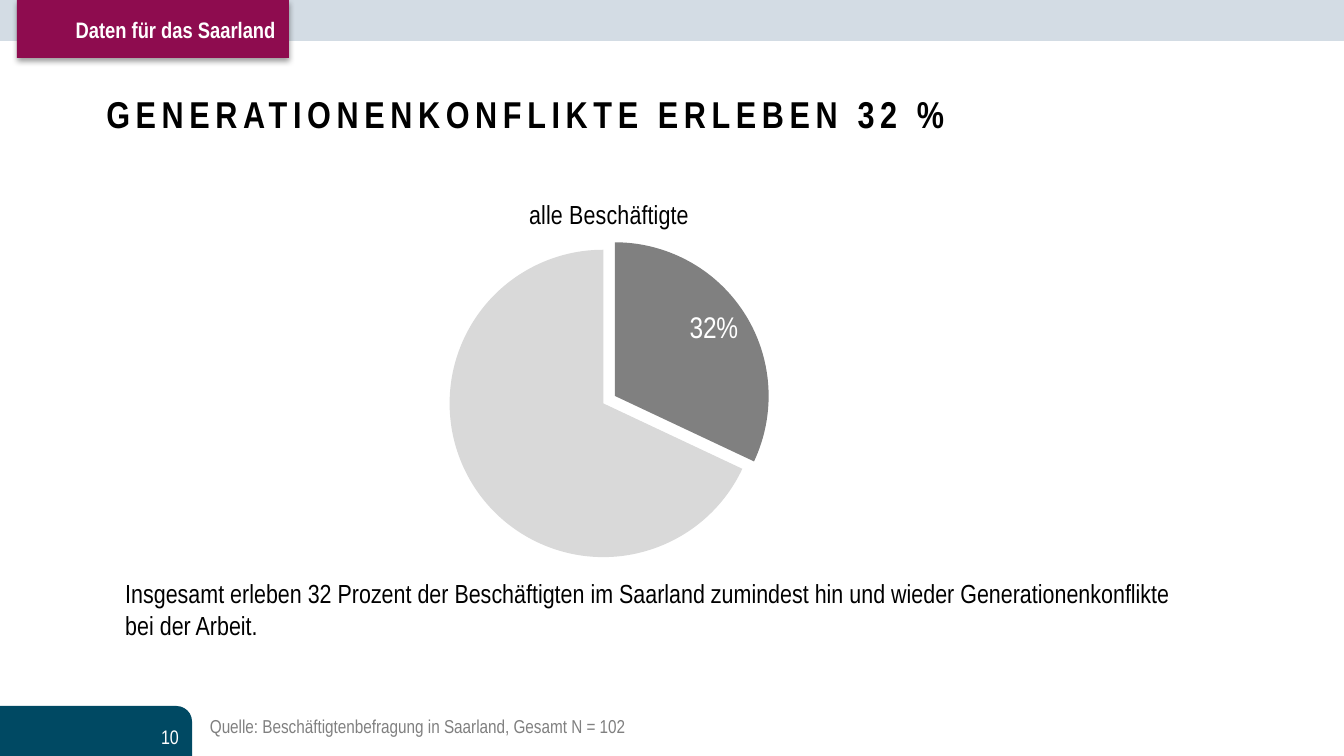
from lxml import etree
from pptx import Presentation
from pptx.chart.data import CategoryChartData
from pptx.dml.color import RGBColor
from pptx.enum.chart import XL_CHART_TYPE, XL_LABEL_POSITION
from pptx.enum.shapes import MSO_SHAPE
from pptx.enum.text import MSO_ANCHOR, PP_ALIGN
from pptx.oxml import parse_xml
from pptx.oxml.ns import nsdecls, qn
from pptx.util import Emu, Pt

RECTANGLE = MSO_SHAPE.RECTANGLE
ONE_ROUND_CORNER = MSO_SHAPE.ROUND_1_RECTANGLE
LEFT, RIGHT = PP_ALIGN.LEFT, PP_ALIGN.RIGHT
TOP, MIDDLE = MSO_ANCHOR.TOP, MSO_ANCHOR.MIDDLE
PIE = XL_CHART_TYPE.PIE
INSIDE_END = XL_LABEL_POSITION.INSIDE_END

WIDTH, HEIGHT = 1344, 756
EMU_PER_PX = 9144000 / WIDTH
FONT = "Arial Narrow"
BLACK, WHITE, GREY = "000000", "FFFFFF", "808080"
LIGHT_GREY, PALE_BLUE = "D9D9D9", "D3DCE4"
PETROL, BERRY = "004963", "8E0C4F"


def px(value):
    """Turn pixels into EMU."""
    return Emu(round(value * EMU_PER_PX))


def color(value):
    """Turn a hex string into a colour."""
    return RGBColor.from_string(value)


def style_font(font, size, fill, bold=False):
    """Set typeface, size, colour and weight."""
    font.name = FONT
    font.size = Pt(size)
    font.bold = bold
    font.color.rgb = color(fill)


def add_block(slide, box, fill, kind=RECTANGLE):
    """Add a filled shape without outline or shadow."""
    shape = slide.shapes.add_shape(kind, *map(px, box))
    shape.shadow.inherit = False
    shape.fill.solid()
    shape.fill.fore_color.rgb = color(fill)
    shape.line.fill.background()
    return shape


def add_drop_shadow(shape):
    """Give a shape a soft shadow straight below it."""
    effects = shape._element.spPr.find(qn("a:effectLst"))
    effects.append(parse_xml(
        f'<a:outerShdw {nsdecls("a")} blurRad="39400" dist="20300" dir="5400000" rotWithShape="0">'
        '<a:srgbClr val="000000"><a:alpha val="38000"/></a:srgbClr></a:outerShdw>'))


def add_text(slide, box, text, size, fill, bold=False, align=LEFT, anchor=TOP,
             inset=None, spacing=None):
    """Add a wrapping text box with one run."""
    frame = slide.shapes.add_textbox(*map(px, box)).text_frame
    frame.word_wrap = True
    frame.vertical_anchor = anchor
    if inset is not None:
        frame.margin_left = frame.margin_right = px(inset)
        frame.margin_top = frame.margin_bottom = px(inset)
    paragraph = frame.paragraphs[0]
    paragraph.alignment = align
    run = paragraph.add_run()
    run.text = text
    style_font(run.font, size, fill, bold)
    if spacing is not None:
        run._r.get_or_add_rPr().set("spc", str(spacing * 100))


def place(element, **fractions):
    """Put a chart part at fractions of the chart area."""
    for old_layout in element.findall(qn("c:layout")):
        element.remove(old_layout)
    layout = etree.Element(qn("c:layout"))
    element.insert(0 if element.find(qn("c:tx")) is None else 1, layout)
    manual = etree.SubElement(layout, qn("c:manualLayout"))
    if "w" in fractions:
        etree.SubElement(manual, qn("c:layoutTarget")).set("val", "inner")
    for axis in "xy":
        etree.SubElement(manual, qn(f"c:{axis}Mode")).set("val", "edge")
    for name, value in fractions.items():
        etree.SubElement(manual, qn(f"c:{name}")).set("val", str(value))


def explode(data_point, percent):
    """Pull a pie slice away from the centre."""
    explosion = etree.Element(qn("c:explosion"))
    explosion.set("val", str(percent))
    data_point.find(qn("c:idx")).addnext(explosion)


def add_pie(slide, box, title, values, fills):
    """Add a pie with its first slice pulled out and labelled."""
    data = CategoryChartData(number_format="0%")
    data.categories = [str(number) for number, _ in enumerate(values, 1)]
    data.add_series("Series 1", values)
    chart = slide.shapes.add_chart(PIE, *map(px, box), data).chart
    chart.has_legend = False
    style_font(chart.font, 10, BLACK)
    run = chart.chart_title.text_frame.paragraphs[0].add_run()
    run.text = title
    style_font(run.font, 14, BLACK)
    place(chart.chart_title._element, x=0.4, y=0.05)
    place(chart._chartSpace.find(f".//{qn('c:plotArea')}"), x=0.31, y=0.18, w=0.37, h=0.77)

    plot = chart.plots[0]
    plot.vary_by_categories = True
    series = plot.series[0]
    for index, fill in enumerate(fills):
        slice_format = series.points[index].format
        slice_format.fill.solid()
        slice_format.fill.fore_color.rgb = color(fill)
        slice_format.line.fill.background()
    explode(series._element.find(qn("c:dPt")), 9)

    labels = series.data_labels
    labels.show_value = True
    labels.number_format = "0%"
    labels.number_format_is_linked = False
    labels.position = INSIDE_END
    style_font(labels.font, 16, WHITE)
    labels._element.insert(0, parse_xml(
        f'<c:dLbl {nsdecls("c")}><c:idx val="1"/><c:delete val="1"/></c:dLbl>'))


def main():
    """Build and save the slide."""
    presentation = Presentation()
    presentation.slide_width, presentation.slide_height = px(WIDTH), px(HEIGHT)
    slide = presentation.slides.add_slide(presentation.slide_layouts[6])

    add_block(slide, (0, 0, WIDTH, 41), PALE_BLUE)
    corner = add_block(slide, (0, 706, 192, 50), PETROL, ONE_ROUND_CORNER)
    corner.adjustments[0] = 0.31
    add_text(slide, (93, 40, 1158, 147), "GENERATIONENKONFLIKTE ERLEBEN 32 %",
             20, BLACK, bold=True, anchor=MIDDLE, spacing=3)
    add_text(slide, (46, 717, 146, 40), "10", 10.5, WHITE, align=RIGHT, anchor=MIDDLE)
    add_text(slide, (112, 571, 1094, 116),
             "Insgesamt erleben 32 Prozent der Beschäftigten im Saarland zumindest hin und "
             "wieder Generationenkonflikte bei der Arbeit.", 14, BLACK)
    add_text(slide, (203, 708, 988, 35),
             "Quelle: Beschäftigtenbefragung in Saarland, Gesamt N = 102", 10, GREY, inset=7)
    add_drop_shadow(add_block(slide, (17, 0, 272, 58), BERRY))
    add_text(slide, (46, 10, 243, 40), "Daten für das Saarland", 12, WHITE,
             bold=True, align=RIGHT)
    add_pie(slide, (192, 177, 831, 401), "alle Beschäftigte", (0.32, 0.68),
            (GREY, LIGHT_GREY))

    presentation.save("out.pptx")


if __name__ == "__main__":
    main()
